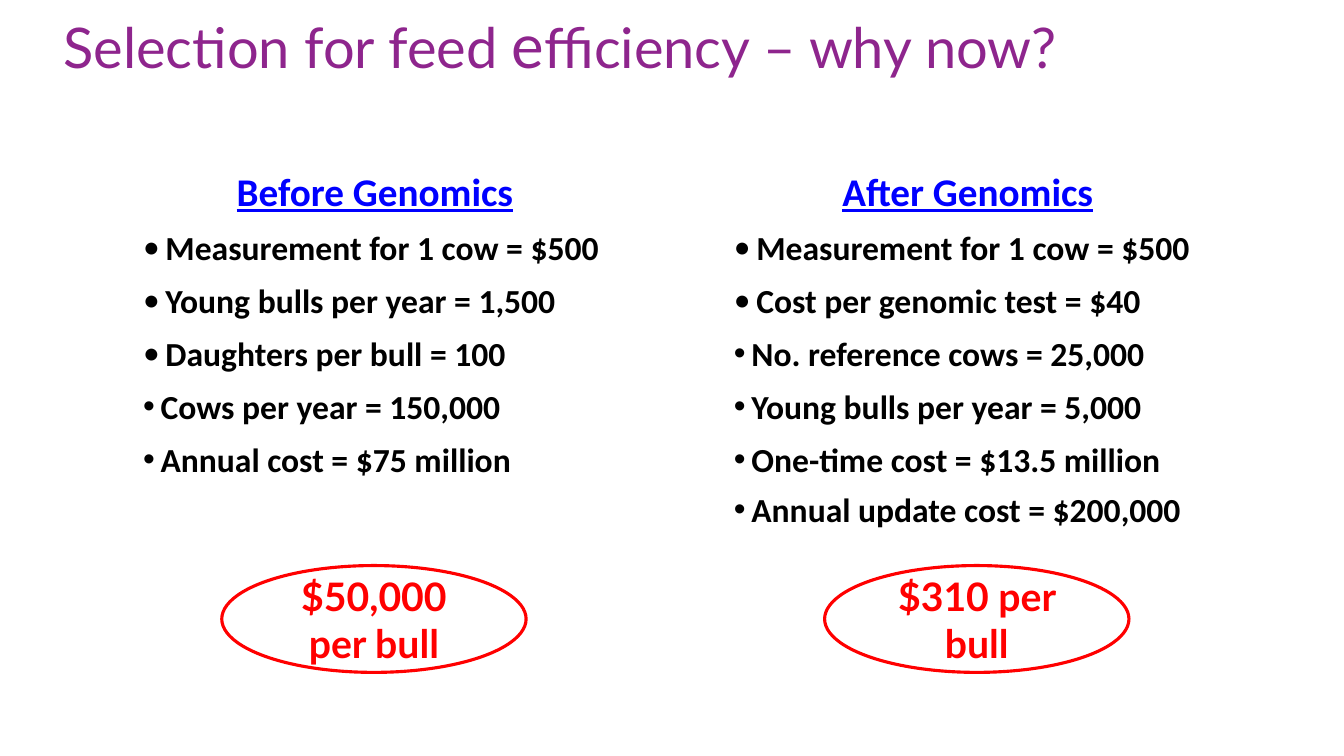
"""Build the slide comparing feed efficiency costs before and after genomics."""
import lxml.etree
import pptx
import pptx.dml.color
import pptx.enum.shapes
import pptx.enum.text
import pptx.oxml.ns
import pptx.util

Pt = pptx.util.Pt
RGBColor = pptx.dml.color.RGBColor
ALIGN = pptx.enum.text.PP_ALIGN
ANCHOR = pptx.enum.text.MSO_ANCHOR

PURPLE = RGBColor(0x8E, 0x25, 0x8D)
BLUE = RGBColor(0x00, 0x00, 0xFF)
RED = RGBColor(0xFF, 0x00, 0x00)
BLACK = RGBColor(0x00, 0x00, 0x00)
WHITE = RGBColor(0xFF, 0xFF, 0xFF)

TITLE_PARTS = [("Selection for feed ", 40), ("e", 44), ("fficiency – why now?", 40)]
PERIODS = [
    {
        "heading": "Before Genomics",
        "inputs": ["Measurement for 1 cow = $500", "Young bulls per year = 1,500",
                   "Daughters per bull = 100"],
        "totals": ["Cows per year = 150,000", "Annual cost = $75 million"],
        "result": "$50,000 per bull",
        "box": (95, 116, 345.6, 244.8),
        "result_left": 158.4,
    },
    {
        "heading": "After Genomics",
        "inputs": ["Measurement for 1 cow = $500", "Cost per genomic test = $40"],
        "totals": ["No. reference cows = 25,000", "Young bulls per year = 5,000",
                   "One-time cost = $13.5 million", "Annual update cost = $200,000"],
        "result": "$310 per bull",
        "box": (517, 116, 348.5, 270),
        "result_left": 589,
    },
]
RESULT_TOP, RESULT_WIDTH, RESULT_HEIGHT = 404, 217.4, 76.3
ITEM_GAP, UPDATE_GAP = 9, 7
INPUT_BULLET = ("Calibri", 16)
TOTAL_BULLET = ("Arial", 12.5)


def place(part, left, top, width, height):
    """Move and size a part, in points."""
    part.left, part.top, part.width, part.height = map(Pt, (left, top, width, height))


def style(font, name, size, color, bold=False):
    """Set the face, size, colour and weight of a font."""
    font.name, font.size, font.bold = name, Pt(size), bold
    font.color.rgb = color


def set_bullet(paragraph, bullet=None):
    """Give a paragraph a hanging bullet of a face and indent, or none."""
    face, indent = bullet or ("", 0)
    properties = paragraph._p.get_or_add_pPr()
    properties.set("marL", str(Pt(indent)))
    properties.set("indent", str(-Pt(indent)))
    qn = pptx.oxml.ns.qn
    if bullet:
        lxml.etree.SubElement(properties, qn("a:buFont")).set("typeface", face)
        lxml.etree.SubElement(properties, qn("a:buChar")).set("char", "•")
    else:
        lxml.etree.SubElement(properties, qn("a:buNone"))


def fill_title(title):
    """Write the slide title."""
    place(title, 38.2, 9.4, 883.4, 50.4)
    title.text_frame.vertical_anchor = ANCHOR.MIDDLE
    line = title.text_frame.paragraphs[0]
    line.alignment, line.line_spacing = ALIGN.LEFT, 0.9
    for text, size in TITLE_PARTS:
        run = line.add_run()
        run.text = text
        style(run.font, "Lato", size, PURPLE)


def fill_period(body, period):
    """Write the heading and figures of one period."""
    place(body, *period["box"])
    frame = body.text_frame
    frame.vertical_anchor = ANCHOR.TOP
    frame.auto_size = pptx.enum.text.MSO_AUTO_SIZE.SHAPE_TO_FIT_TEXT
    heading = frame.paragraphs[0]
    heading.text = period["heading"]
    heading.alignment, heading.space_before = ALIGN.CENTER, Pt(0)
    set_bullet(heading)
    style(heading.runs[0].font, "Calibri", 28, BLUE, True)
    heading.runs[0].font.underline = True
    figures = [(text, INPUT_BULLET) for text in period["inputs"]]
    figures += [(text, TOTAL_BULLET) for text in period["totals"]]
    for text, bullet in figures:
        item = frame.add_paragraph()
        item.text = text
        item.space_before = Pt(UPDATE_GAP if "update" in text else ITEM_GAP)
        set_bullet(item, bullet)
        style(item.runs[0].font, "Calibri", 24, BLACK, True)


def add_result(slide, period):
    """Draw the ringed cost per bull of one period."""
    result = slide.shapes.add_shape(
        pptx.enum.shapes.MSO_SHAPE.OVAL, Pt(period["result_left"]), Pt(RESULT_TOP),
        Pt(RESULT_WIDTH), Pt(RESULT_HEIGHT))
    result.shadow.inherit = False
    result.fill.solid()
    result.fill.fore_color.rgb = WHITE
    result.line.color.rgb = RED
    result.line.width = Pt(2.25)
    result.text_frame.word_wrap = True
    result.text_frame.vertical_anchor = ANCHOR.MIDDLE
    cost = result.text_frame.paragraphs[0]
    cost.text = period["result"]
    cost.alignment = ALIGN.CENTER
    style(cost.runs[0].font, "Lato", 28, RED, True)


def main():
    """Assemble and save the slide."""
    deck = pptx.Presentation()
    deck.slide_width, deck.slide_height = Pt(960), Pt(540)
    two_content = deck.slide_layouts[3]
    slide = deck.slides.add_slide(two_content)
    fill_title(slide.shapes.title)
    for index, period in enumerate(PERIODS, start=1):
        fill_period(slide.placeholders[index], period)
        add_result(slide, period)
    deck.save("out.pptx")


if __name__ == "__main__":
    main()
